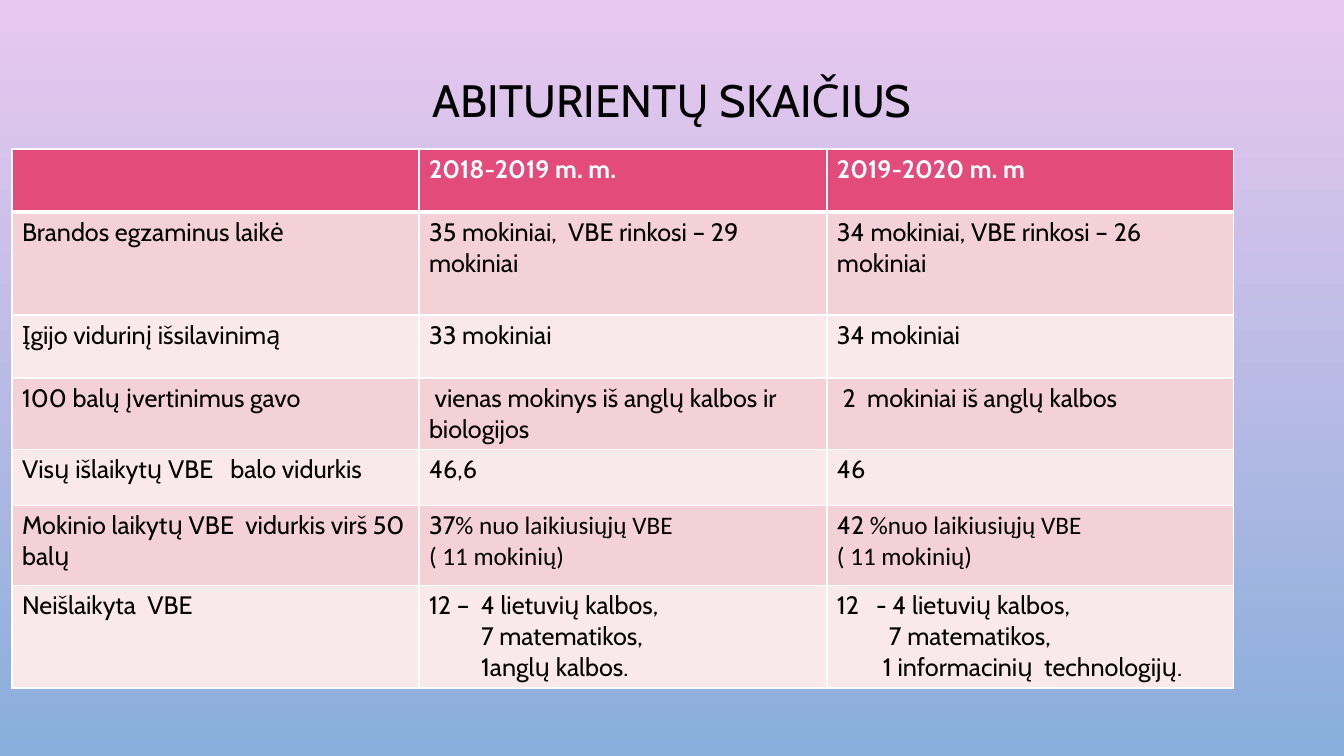
from lxml import etree
from pptx import Presentation
from pptx import util as u
from pptx.dml.color import RGBColor
from pptx.enum import text
from pptx.oxml.ns import qn

PX = 12192000 / 1344
HUES = {"top": "E9C8EF", "base": "89AEDB", "head": "E34B7A", "odd": "F4D0D7",
        "even": "FAE9EC", "white": "FFFFFF", "black": "000000"}
COLS = [407, 408, 407]
ROWS = [63, 103, 63, 71, 56, 80, 102]

# A cell is one line or a list of lines; a line is text or (indent, text).
# Text after a bar is set in the second font.
CELLS = [
    ["", "2018-2019 m. m.", "2019-2020 m. m"],
    ["Brandos egzaminus laikė", "35 mokiniai,  VBE rinkosi – 29 mokiniai",
     "34 mokiniai, VBE rinkosi – 26 mokiniai"],
    ["Įgijo vidurinį išsilavinimą", "33 mokiniai", "34 mokiniai"],
    ["100 balų įvertinimus gavo", " vienas mokinys iš anglų kalbos ir biologijos",
     " 2  mokiniai iš anglų kalbos"],
    ["Visų išlaikytų VBE   balo vidurkis", "46,6", "46"],
    ["Mokinio laikytų VBE  vidurkis virš 50 balų",
     ["37|% nuo laikiusiųjų VBE", "|( 11 mokinių)"],
     ["42 |%nuo laikiusiųjų VBE", "|( 11 mokinių)"]],
    ["Neišlaikyta  VBE",
     ["12 –  4 lietuvių kalbos,", (52, "7 matematikos,"), (52, "1anglų kalbos.")],
     ["12   - 4 lietuvių kalbos,", (52, "7 matematikos,"),
      (46, "1 informacinių  technologijų.")]],
]


def px(n):
    return u.Emu(round(n * PX))


def rgb(name):
    return RGBColor.from_string(HUES[name])


def write(par, words, size=18, hue="black", bold=False, align=None, indent=0):
    if indent:
        par._p.get_or_add_pPr().set("marL", str(px(indent)))
    par.alignment = align
    for part, face in zip(words.split("|"), ("Cabin", "Calibri")):
        if part:
            run = par.add_run()
            run.text = part
            font = run.font
            font.name, font.size, font.bold = face, u.Pt(size), bold
            font.color.rgb = rgb(hue)


def edge(cell, side, width):
    line = etree.SubElement(cell._tc.get_or_add_tcPr(), qn("a:ln" + side),
                            w=str(u.Pt(width)))
    fill = etree.SubElement(line, qn("a:solidFill"))
    etree.SubElement(fill, qn("a:srgbClr"), val=HUES["white"])


def backdrop(slide):
    fill = slide.background.fill
    fill.gradient()
    fill.gradient_angle = 270
    for stop, hue in zip(fill.gradient_stops, ("top", "base")):
        stop.color.rgb = rgb(hue)
    fill.gradient_stops[0].position = 0
    fill.gradient_stops[1].position = 1


def heading(slide, x, y, w, h):
    title = slide.shapes.title
    title.left, title.top, title.width, title.height = map(px, (x, y, w, h))
    frame = title.text_frame
    frame.vertical_anchor = text.MSO_ANCHOR.MIDDLE
    par = frame.paragraphs[0]
    par.line_spacing = 0.9
    write(par, "ABITURIENTŲ SKAIČIUS", size=32.4, align=text.PP_ALIGN.CENTER)


def fill_cell(cell, lines, row):
    for side in "LRTB":
        thick = (row == 0 and side == "B") or (row == 1 and side == "T")
        edge(cell, side, 3 if thick else 1)
    cell.fill.solid()
    cell.fill.fore_color.rgb = rgb("head" if row == 0 else "odd" if row % 2 else "even")
    frame = cell.text_frame
    for i, line in enumerate(lines if isinstance(lines, list) else [lines]):
        par = frame.add_paragraph() if i else frame.paragraphs[0]
        indent, words = line if isinstance(line, tuple) else (0, line)
        write(par, words, hue="black" if row else "white", bold=row == 0,
              indent=indent)


def results(slide, x, y):
    grid = slide.shapes.add_table(len(ROWS), len(COLS), px(x), px(y),
                                  px(sum(COLS)), px(sum(ROWS))).table
    for col, w in zip(grid.columns, COLS):
        col.width = px(w)
    for r, h in enumerate(ROWS):
        grid.rows[r].height = px(h)
        for c, lines in enumerate(CELLS[r]):
            fill_cell(grid.cell(r, c), lines, r)


def main():
    deck = Presentation()
    deck.slide_width, deck.slide_height = px(1344), px(756)
    slide = deck.slides.add_slide(deck.slide_layouts[5])
    backdrop(slide)
    heading(slide, 101, 71, 1142, 64)
    results(slide, 12, 149)
    deck.save("out.pptx")


if __name__ == "__main__":
    main()
